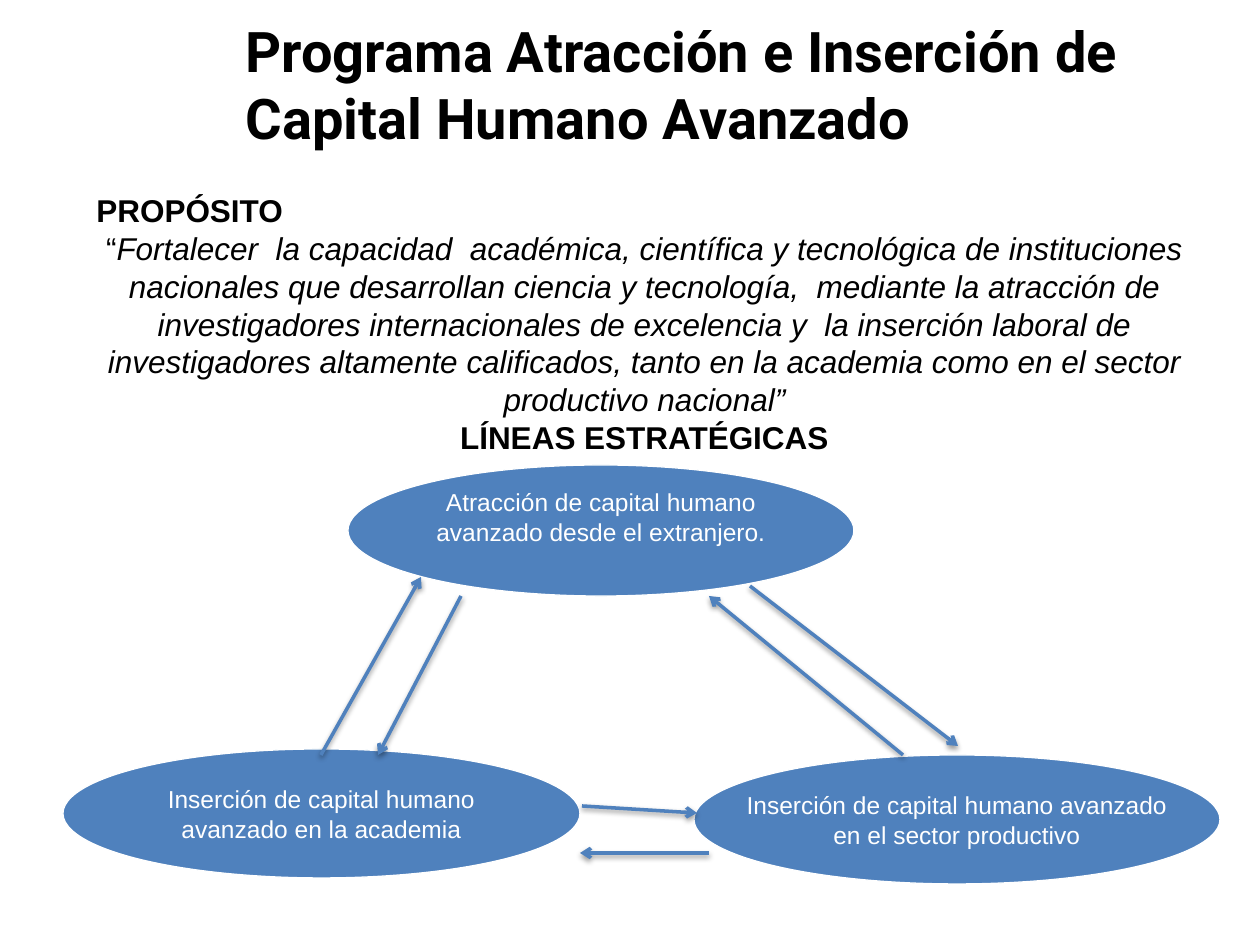
from dataclasses import dataclass

from lxml import etree
from pptx import Presentation
from pptx import util as u
from pptx.dml.color import RGBColor
from pptx.enum import shapes, text
from pptx.oxml.ns import qn

PX_PER_INCH = 126
CENTER = text.PP_ALIGN.CENTER


def px(n):
    return u.Emu(round(n * 914400 / PX_PER_INCH))


@dataclass(frozen=True)
class Theme:
    ink: str = "000000"
    paper: str = "FFFFFF"
    accent: str = "4F81BD"
    title_font: str = "Roboto"
    body_font: str = "Arial"
    title_size: int = 32
    body_size: int = 18
    label_size: int = 14


class Deck:
    def __init__(self, theme):
        self.theme = theme
        self.prs = Presentation()
        self.prs.slide_width, self.prs.slide_height = px(1260), px(945)

    def add_slide(self):
        self.s = self.prs.slides.add_slide(self.prs.slide_layouts[5])

    def style(self, r, size, color, font=None, bold=False, italic=False):
        r.font.name = font or self.theme.body_font
        r.font.size = u.Pt(size)
        r.font.color.rgb = RGBColor.from_string(color)
        r.font.bold, r.font.italic = bold, italic

    def title(self, box, words):
        t, sp = self.theme, self.s.shapes.title
        sp.left, sp.top, sp.width, sp.height = map(px, box)
        tf = sp.text_frame
        tf.text = words
        tf.auto_size = text.MSO_AUTO_SIZE.NONE
        tf.vertical_anchor = text.MSO_ANCHOR.MIDDLE
        p = tf.paragraphs[0]
        p.alignment = text.PP_ALIGN.LEFT
        self.style(p.runs[0], t.title_size, t.ink, t.title_font, bold=True)

    def body(self, box, paragraphs):
        """Paragraphs are (alignment, [(words, run style), ...]) pairs."""
        t = self.theme
        tf = self.s.shapes.add_textbox(*map(px, box)).text_frame
        tf.word_wrap = True
        tf.auto_size = text.MSO_AUTO_SIZE.SHAPE_TO_FIT_TEXT
        for i, (alignment, runs) in enumerate(paragraphs):
            p = tf.add_paragraph() if i else tf.paragraphs[0]
            p.alignment = alignment
            for words, look in runs:
                r = p.add_run()
                r.text = words
                self.style(r, t.body_size, t.ink, **look)

    def ellipse(self, box, label, bottom_inset=6):
        t = self.theme
        sp = self.s.shapes.add_shape(shapes.MSO_SHAPE.OVAL, *map(px, box))
        sp.shadow.inherit = False
        sp.fill.solid()
        sp.fill.fore_color.rgb = RGBColor.from_string(t.accent)
        sp.line.color.rgb = RGBColor.from_string(t.paper)
        sp.line.width = u.Pt(0.75)
        tf = sp.text_frame
        tf.text = label
        tf.word_wrap = False
        tf.vertical_anchor = text.MSO_ANCHOR.MIDDLE
        tf.margin_bottom = px(bottom_inset)
        for p in tf.paragraphs:
            p.alignment = CENTER
            self.style(p.runs[0], t.label_size, t.paper)

    def arrow(self, start, end):
        """Straight line with an open head at its end and a soft shadow below."""
        c = self.s.shapes.add_connector(
            shapes.MSO_CONNECTOR.STRAIGHT, *map(px, start + end))
        c.line.color.rgb = RGBColor.from_string(self.theme.accent)
        c.line.width = u.Pt(2)
        etree.SubElement(c.line._get_or_add_ln(), qn("a:tailEnd"), type="arrow")
        effects = etree.SubElement(c._element.spPr, qn("a:effectLst"))
        shadow = etree.SubElement(
            effects, qn("a:outerShdw"), blurRad=str(u.Pt(3.1)),
            dist=str(u.Pt(1.6)), dir="5400000", rotWithShape="0")
        color = etree.SubElement(shadow, qn("a:srgbClr"), val=self.theme.ink)
        etree.SubElement(color, qn("a:alpha"), val="38000")


PURPOSE = (
    "Fortalecer  la capacidad  académica, científica y tecnológica de "
    "instituciones nacionales que desarrollan ciencia y tecnología,  mediante "
    "la atracción de investigadores internacionales de excelencia y  la "
    "inserción laboral de investigadores altamente calificados, tanto en la "
    "academia como en el sector productivo nacional”"
)
ARROWS = [
    ((321, 755), (421, 577)),
    ((461, 596), (378, 755)),
    ((750, 586), (958, 746)),
    ((903, 755), (709, 596)),
    ((582, 806), (697, 813)),
    ((709, 853), (580, 853)),
]


def main():
    deck = Deck(Theme())
    deck.add_slide()
    deck.title((233, 5, 973, 158),
               "Programa Atracción e Inserción de Capital Humano Avanzado")
    deck.body((84, 185, 1121, 280), [
        (text.PP_ALIGN.LEFT, [("PROPÓSITO", {"bold": True})]),
        (CENTER, [("“", {}), (PURPOSE, {"italic": True})]),
        (CENTER, [("LÍNEAS ESTRATÉGICAS", {"bold": True})]),
    ])
    deck.ellipse((694, 755, 526, 129),
                 "Inserción de capital humano avanzado\nen el sector productivo")
    deck.ellipse((63, 749, 517, 129),
                 "Inserción de capital humano\navanzado en la academia")
    deck.ellipse((348, 465, 506, 131),
                 "Atracción de capital humano\navanzado desde el extranjero.",
                 bottom_inset=34)
    for start, end in ARROWS:
        deck.arrow(start, end)
    deck.prs.save("out.pptx")


if __name__ == "__main__":
    main()
